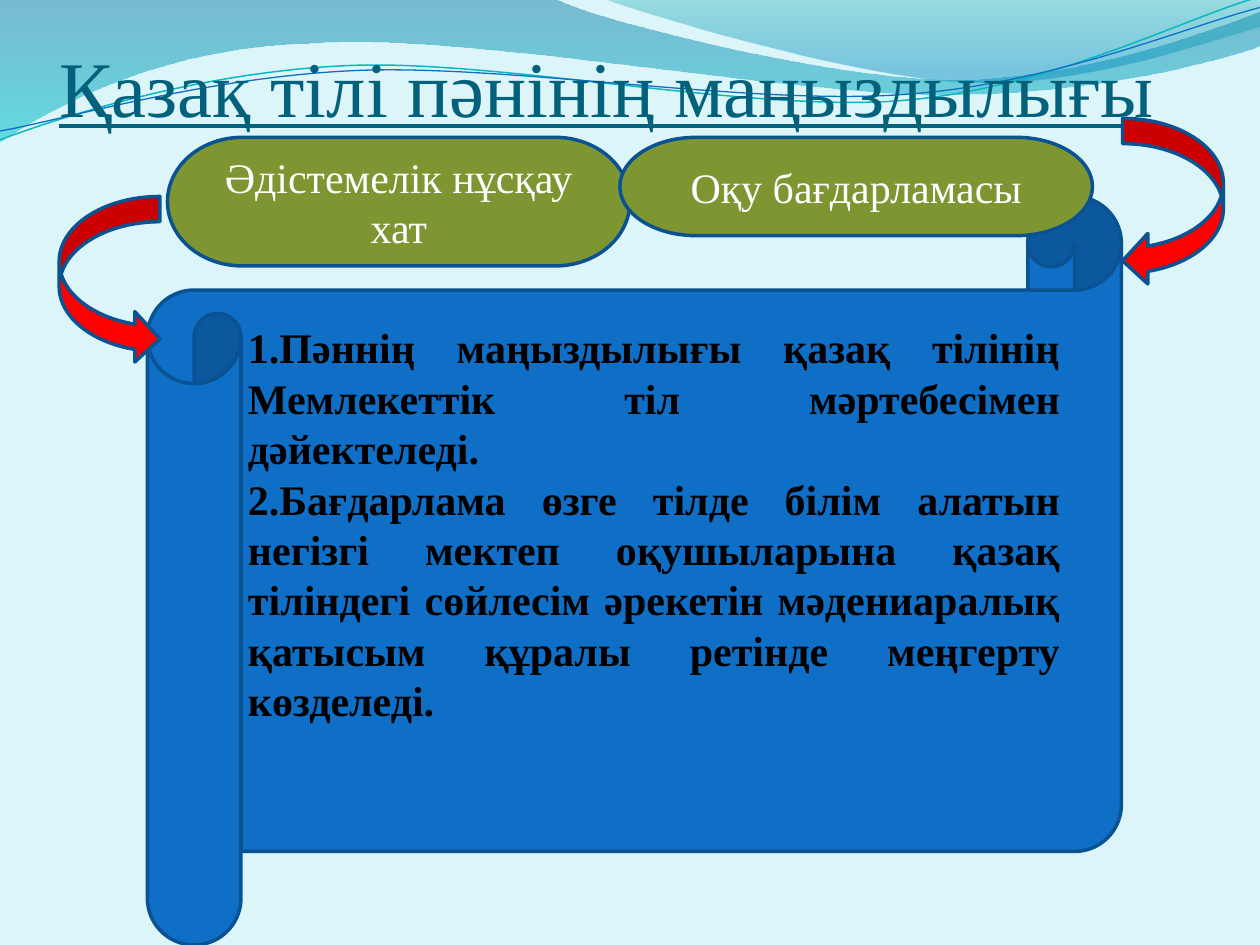
from dataclasses import dataclass
from math import cos, radians, sin

from lxml import etree
from pptx import Presentation
from pptx.dml.color import RGBColor
from pptx.enum.shapes import MSO_SHAPE
from pptx.enum.text import MSO_ANCHOR, PP_ALIGN
from pptx.oxml.ns import qn
from pptx.text.text import Font
from pptx.util import Pt

PX = 9144
TERMINATOR = MSO_SHAPE.FLOWCHART_TERMINATOR
SCROLL = MSO_SHAPE.HORIZONTAL_SCROLL
LEFT_ARROW = MSO_SHAPE.CURVED_LEFT_ARROW
RIGHT_ARROW = MSO_SHAPE.CURVED_RIGHT_ARROW
MIDDLE, BOTTOM = MSO_ANCHOR.MIDDLE, MSO_ANCHOR.BOTTOM
LEFT, CENTER, JUSTIFY = PP_ALIGN.LEFT, PP_ALIGN.CENTER, PP_ALIGN.JUSTIFY

Point = tuple[int, int]
Segment = tuple[Point, ...]


@dataclass(frozen=True)
class Theme:
    font: str = "Times New Roman"
    title_size: int = 45
    text_size: int = 24
    outline_width: int = 2
    background: str = "DBF5F9"
    title: str = "04617B"
    scroll: str = "0F6FC6"
    outline: str = "0B5292"
    arrow: str = "FF0000"
    label: str = "7E9632"
    light: str = "FFFFFF"
    dark: str = "000000"
    teal_line: str = "0AB8BF"
    blue_line: str = "0F6FC6"


@dataclass(frozen=True)
class Stop:
    position: int
    color: str
    opacity: int


@dataclass(frozen=True)
class Wave:
    start: Point
    segments: tuple[Segment, ...]
    stops: tuple[Stop, ...] = ()
    color: str = ""
    width: float = 0
    center: Point = (0, 0)
    tilt: float = 0


@dataclass(frozen=True)
class Block:
    left: int
    top: int
    width: int
    height: int
    preset: MSO_SHAPE
    fill: str
    text: str = ""


THEME = Theme()

WAVES = (
    Wave((0, 0), (
        ((440, -1),),
        ((476, 17), (664, 63), (758, 63)),
        ((853, 63), (958, 26), (1000, 9)),
        ((1001, 36),),
        ((983, 44), (870, 76), (746, 75)),
        ((622, 75), (382, 28), (257, 34)),
        ((129, 36), (46, 83), (-1, 113)),
        ((0, 0),),
    ), stops=(Stop(0, "0074A1", 45), Stop(100, "00C6CF", 55))),
    Wave((479, -1), (
        ((509, 11), (682, 62), (769, 65)),
        ((856, 69), (961, 32), (1000, 21)),
        ((1000, 0),),
        ((479, -1),),
    ), stops=(Stop(0, "00A1A9", 30), Stop(80, "008BBF", 45))),
    Wave((0, 111), (
        ((48, 93), (158, 57), (277, 52)),
        ((395, 47), (593, 89), (713, 80)),
        ((833, 71), (938, 15), (998, -2)),
    ), color=THEME.teal_line, width=0.85, center=(499, 57), tilt=-2.7),
    Wave((0, 104), (
        ((47, 96), (164, 61), (283, 56)),
        ((403, 51), (597, 84), (717, 75)),
        ((836, 67), (941, 21), (1000, 6)),
    ), color=THEME.blue_line, width=0.75, center=(500, 59), tilt=-2.7),
)

SCROLL_AND_ARROWS = (
    Block(117, 156, 773, 594, SCROLL, THEME.scroll),
    Block(891, 94, 80, 133, LEFT_ARROW, THEME.arrow),
    Block(47, 156, 80, 133, RIGHT_ARROW, THEME.arrow),
)
LABELS = (
    Block(133, 109, 367, 102, TERMINATOR, THEME.label, "Әдістемелік нұсқау хат"),
    Block(492, 109, 375, 78, TERMINATOR, THEME.label, "Оқу бағдарламасы"),
)
TITLE = "Қазақ тілі пәнінің маңыздылығы\v"
BODY = (
    "1.Пәннің маңыздылығы қазақ тілінің Мемлекеттік тіл мәртебесімен дәйектеледі. \n"
    "2.Бағдарлама өзге тілде білім алатын негізгі мектеп оқушыларына қазақ "
    "тіліндегі сөйлесім әрекетін мәдениаралық қатысым құралы ретінде меңгерту көзделеді. "
)


def rgb(color: str) -> RGBColor:
    return RGBColor.from_string(color)


def level(point: Point, wave: Wave) -> tuple[float, float]:
    angle = radians(-wave.tilt)
    across, down = point[0] - wave.center[0], point[1] - wave.center[1]
    return ((wave.center[0] + across * cos(angle) - down * sin(angle)) * PX,
            (wave.center[1] + across * sin(angle) + down * cos(angle)) * PX)


def bend(shape, wave: Wave) -> None:
    lines = iter(list(shape._element.spPr.iter(qn("a:lnTo"))))
    for segment in wave.segments:
        first, *others = [next(lines) for _ in segment]
        if others:
            curve = etree.Element(qn("a:cubicBezTo"))
            first.addprevious(curve)
            for line in (first, *others):
                curve.append(line[0])
                line.getparent().remove(line)


def draw_wave(page, wave: Wave) -> None:
    points = [level(point, wave) for segment in wave.segments for point in segment]
    builder = page.shapes.build_freeform(*level(wave.start, wave), scale=1.0)
    builder.add_line_segments(points, close=bool(wave.stops))
    shape = builder.convert_to_shape()
    bend(shape, wave)
    shape.rotation = wave.tilt
    shape.shadow.inherit = False
    if not wave.stops:
        shape.fill.background()
        shape.line.color.rgb = rgb(wave.color)
        shape.line.width = Pt(wave.width)
        return
    shape.line.fill.background()
    shape.fill.gradient()
    shape.fill.gradient_angle = 270
    for target, stop in zip(shape.fill.gradient_stops, wave.stops):
        target.position = stop.position / 100
        target.color.rgb = rgb(stop.color)
    for color, stop in zip(shape._element.spPr.iter(qn("a:srgbClr")), wave.stops):
        etree.SubElement(color, qn("a:alpha")).set("val", str(stop.opacity * 1000))


def write_text(shape, text: str, color: str, size: int, align: PP_ALIGN,
               anchor: MSO_ANCHOR, bold: bool = False, underline: bool = False) -> None:
    frame = shape.text_frame
    frame.text = text
    frame.word_wrap = True
    frame.vertical_anchor = anchor
    for para in frame.paragraphs:
        para.alignment = align
        ending = Font(para._p.get_or_add_endParaRPr())
        for font in (*(span.font for span in para.runs), ending):
            font.name = THEME.font
            font.size = Pt(size)
            font.bold = bold
            font.underline = underline
            font.color.rgb = rgb(color)


def draw_block(page, block: Block) -> None:
    shape = page.shapes.add_shape(block.preset, block.left * PX, block.top * PX,
                                  block.width * PX, block.height * PX)
    shape.shadow.inherit = False
    shape.fill.solid()
    shape.fill.fore_color.rgb = rgb(block.fill)
    shape.line.color.rgb = rgb(THEME.outline)
    shape.line.width = Pt(THEME.outline_width)
    if block.text:
        write_text(shape, block.text, THEME.light, THEME.text_size, CENTER, MIDDLE)


def main() -> None:
    deck = Presentation()
    deck.slide_width, deck.slide_height = 1000 * PX, 750 * PX
    page = deck.slides.add_slide(deck.slide_layouts[6])
    page.background.fill.solid()
    page.background.fill.fore_color.rgb = rgb(THEME.background)
    for wave in WAVES:
        draw_wave(page, wave)

    title = page.shapes.add_textbox(47 * PX, 102 * PX, 900 * PX, 79 * PX)
    title.text_frame.margin_left = title.text_frame.margin_right = 0
    title.text_frame.margin_bottom = 0
    write_text(title, TITLE, THEME.title, THEME.title_size, LEFT, BOTTOM, underline=True)

    for block in SCROLL_AND_ARROWS:
        draw_block(page, block)
    body = page.shapes.add_textbox(187 * PX, 249 * PX, 664 * PX, 333 * PX)
    write_text(body, BODY, THEME.dark, THEME.text_size, JUSTIFY, MIDDLE, bold=True)
    for block in LABELS:
        draw_block(page, block)
    deck.save("out.pptx")


if __name__ == "__main__":
    main()
